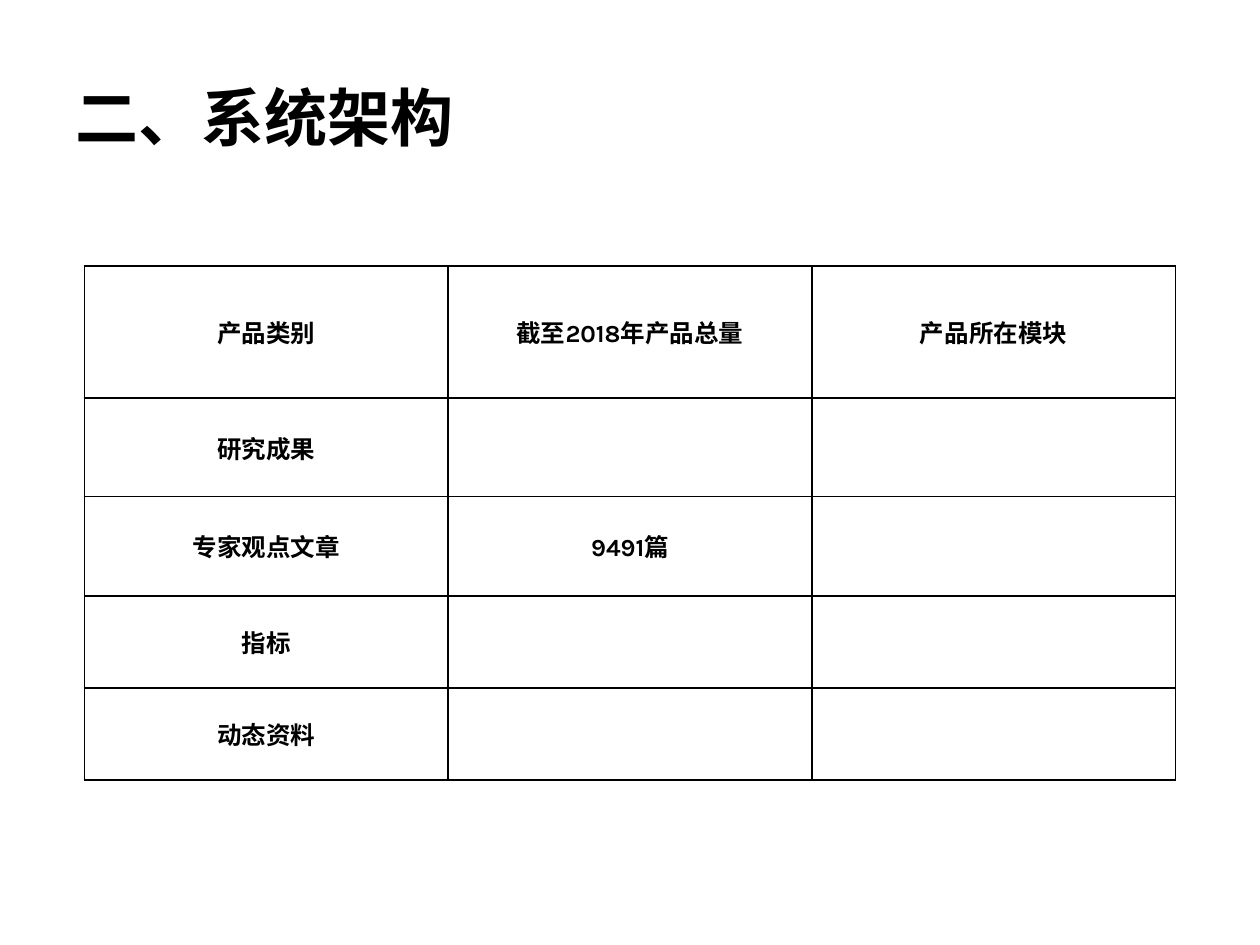
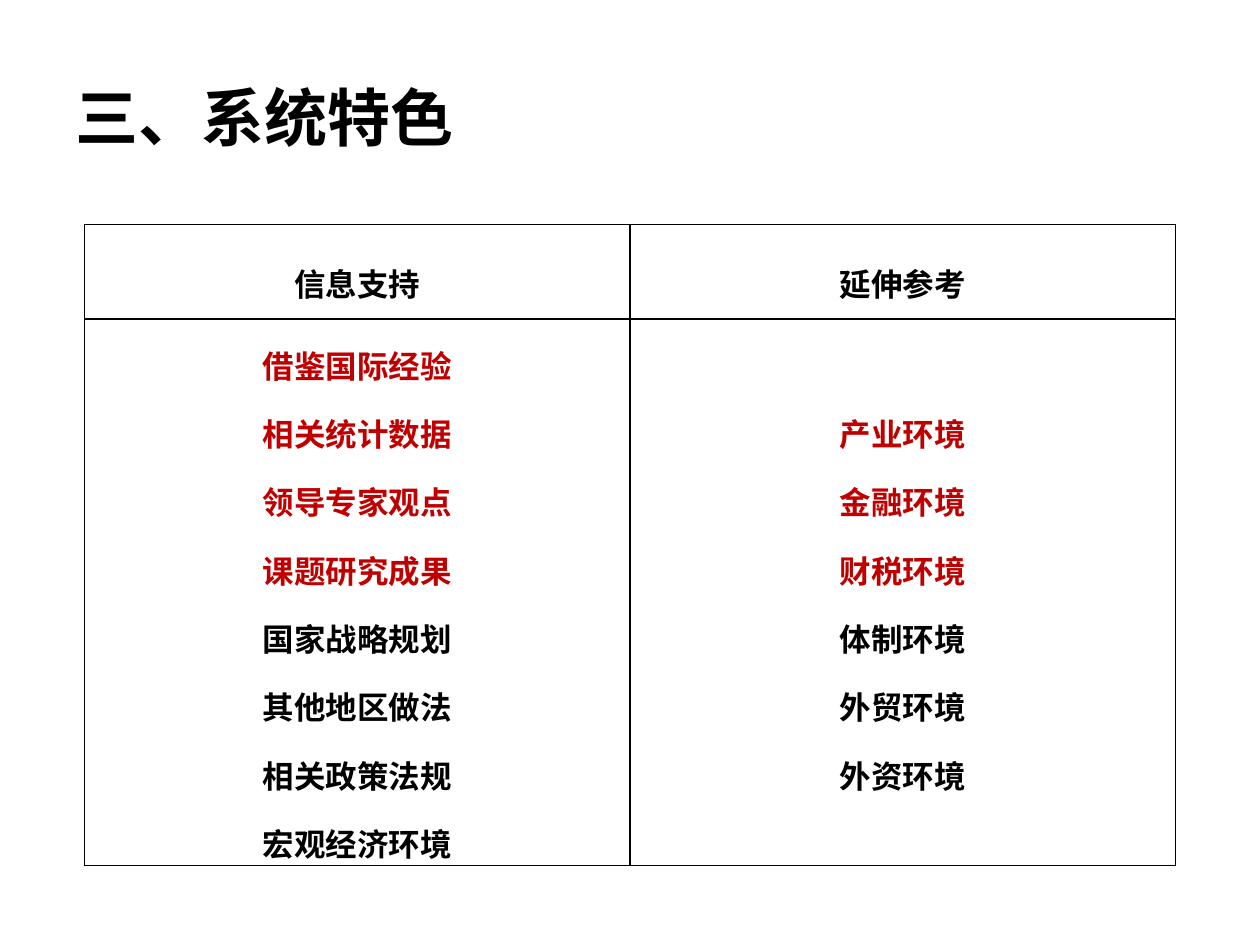
import pptx
import pptx.dml.color
import pptx.enum.text
import pptx.oxml
import pptx.oxml.ns
import pptx.util
from dataclasses import dataclass

Inches = pptx.util.Inches
Pt = pptx.util.Pt
RGB = pptx.dml.color.RGBColor.from_string
MIDDLE = pptx.enum.text.MSO_ANCHOR.MIDDLE
CENTER = pptx.enum.text.PP_ALIGN.CENTER


@dataclass(frozen=True)
class Theme:
    black: str = "000000"
    white: str = "FFFFFF"
    red: str = "C00000"
    title_font: str = "Calibri"
    table_font: str = "Karla"
    title_size: int = 36
    border_width: int = 1


THEME = Theme()

# Each cell is a list of lines; the first `red_lines` lines of a cell are red.
ARCHITECTURE = {
    "title": "二、系统架构",
    "top": 2.11,
    "row_heights": [1.05, 0.78, 0.79, 0.73, 0.73],
    "size": 14,
    "fill": THEME.white,
    "rows": [
        [["产品类别"], ["截至2018年产品总量"], ["产品所在模块"]],
        [["研究成果"], [], []],
        [["专家观点文章"], ["9491篇"], []],
        [["指标"], [], []],
        [["动态资料"], [], []],
    ],
}

FEATURES = {
    "title": "三、系统特色",
    "top": 1.78,
    "row_heights": [0.75, 4.34],
    "size": 18,
    "line_spacing": 1.5,
    "margins": (0.07, 0),
    "red_lines": {(1, 0): 4, (1, 1): 3},
    "rows": [
        [["信息支持"], ["延伸参考"]],
        [
            ["借鉴国际经验", "相关统计数据", "领导专家观点", "课题研究成果",
             "国家战略规划", "其他地区做法", "相关政策法规", "宏观经济环境"],
            ["产业环境", "金融环境", "财税环境",
             "体制环境", "外贸环境", "外资环境"],
        ],
    ],
}

TABLE_LEFT, TABLE_WIDTH = 0.67, 8.66


def add_run(p, text, font, size, color):
    r = p.add_run()
    r.text = text
    r.font.name = font
    r.font.size = Pt(size)
    r.font.bold = True
    r.font.color.rgb = RGB(color)


def add_title(slide, text):
    sp = slide.shapes.add_textbox(Inches(0.5), Inches(0.3), Inches(9), Inches(1.25))
    tf = sp.text_frame
    tf.word_wrap = True
    tf.vertical_anchor = MIDDLE
    add_run(tf.paragraphs[0], text, THEME.title_font, THEME.title_size, THEME.black)


def set_borders(cell):
    tc_pr = cell._tc.get_or_add_tcPr()
    for i, side in enumerate(("lnL", "lnR", "lnT", "lnB")):
        tc_pr.insert(i, pptx.oxml.parse_xml(
            f'<a:{side} {pptx.oxml.ns.nsdecls("a")} w="{Pt(THEME.border_width)}">'
            f'<a:solidFill><a:srgbClr val="{THEME.black}"/></a:solidFill></a:{side}>'))


def fill_cell(cell, lines, content, red_count):
    cell.vertical_anchor = MIDDLE
    if "margins" in content:
        side, end = map(Inches, content["margins"])
        cell.margin_left = cell.margin_right = side
        cell.margin_top = cell.margin_bottom = end
    if "fill" in content:
        cell.fill.solid()
        cell.fill.fore_color.rgb = RGB(content["fill"])
    else:
        cell.fill.background()
    set_borders(cell)
    tf = cell.text_frame
    for i, line in enumerate(lines):
        p = tf.add_paragraph() if i else tf.paragraphs[0]
        p.alignment = CENTER
        p.line_spacing = content.get("line_spacing")
        color = THEME.red if i < red_count else THEME.black
        add_run(p, line, THEME.table_font, content["size"], color)


def add_grid(slide, content):
    rows, heights = content["rows"], content["row_heights"]
    n_cols = len(rows[0])
    table = slide.shapes.add_table(
        len(rows), n_cols, Inches(TABLE_LEFT), Inches(content["top"]),
        Inches(TABLE_WIDTH), Inches(sum(heights))).table
    table.first_row = table.horz_banding = False
    for col in table.columns:
        col.width = Inches(TABLE_WIDTH / n_cols)
    for r, (row, height) in enumerate(zip(rows, heights)):
        table.rows[r].height = Inches(height)
        for c, lines in enumerate(row):
            red_count = content.get("red_lines", {}).get((r, c), 0)
            fill_cell(table.cell(r, c), lines, content, red_count)


def main():
    prs = pptx.Presentation()
    prs.slide_width, prs.slide_height = Inches(10), Inches(7.5)
    for content in (ARCHITECTURE, FEATURES):
        slide = prs.slides.add_slide(prs.slide_layouts[6])
        slide.background.fill.solid()
        slide.background.fill.fore_color.rgb = RGB(THEME.white)
        add_title(slide, content["title"])
        add_grid(slide, content)
    prs.save("out.pptx")


if __name__ == "__main__":
    main()
